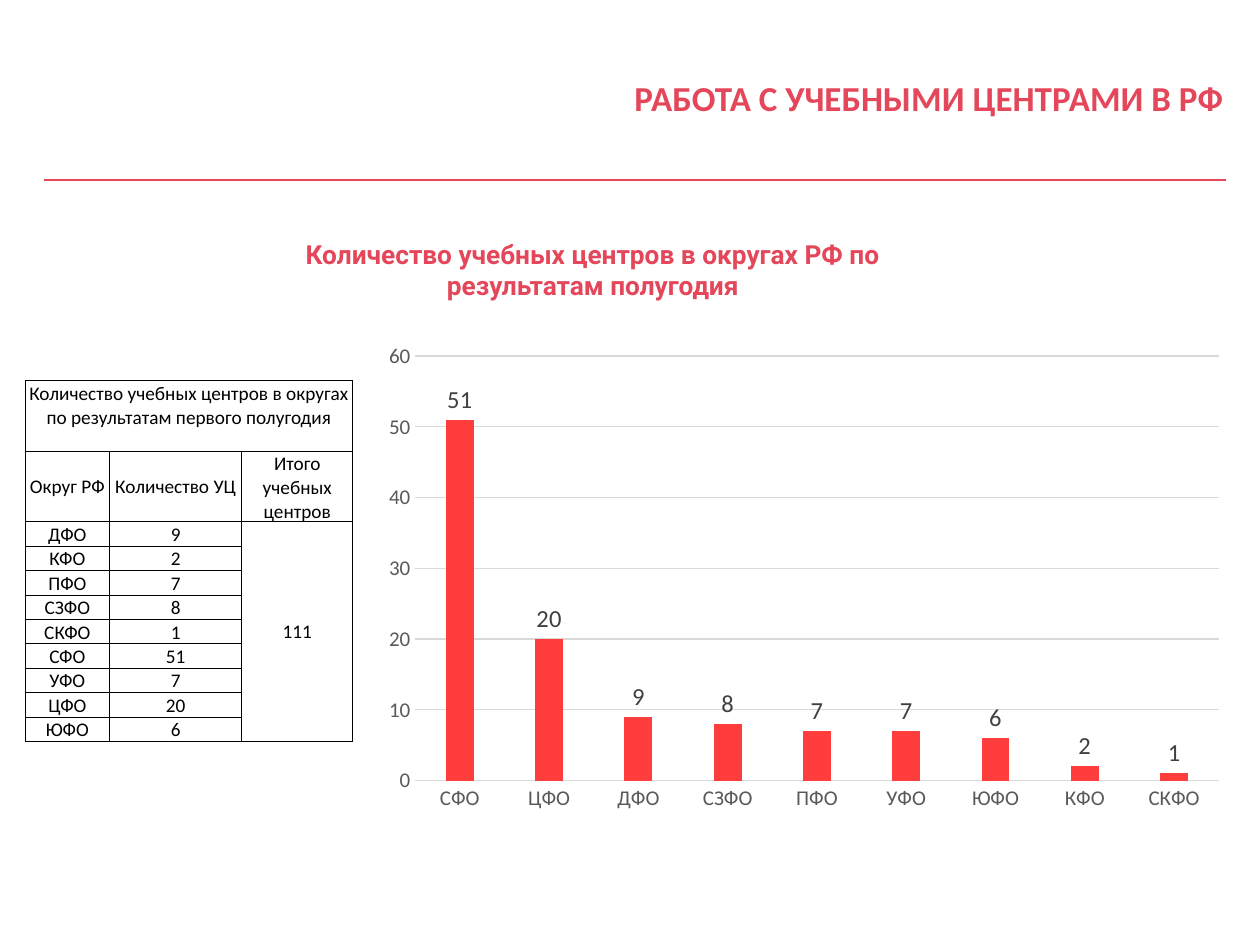
from dataclasses import dataclass

from lxml.etree import SubElement
from pptx import Presentation
from pptx.chart.data import CategoryChartData
from pptx.dml.color import RGBColor
from pptx.enum.chart import XL_CHART_TYPE, XL_LABEL_POSITION, XL_TICK_MARK
from pptx.enum.shapes import MSO_CONNECTOR
from pptx.enum.text import MSO_ANCHOR, MSO_AUTO_SIZE, PP_ALIGN
from pptx.oxml.ns import qn
from pptx.util import Inches, Pt


@dataclass(frozen=True)
class Theme:
    accent: str = "E4465A"
    bar: str = "FF3D3D"
    ink: str = "000000"
    axis: str = "595959"
    value: str = "404040"
    grid: str = "D9D9D9"
    body_font: str = "Calibri"
    heading_font: str = "Roboto"
    title_size: int = 20
    heading_size: int = 15
    table_size: int = 11
    axis_size: int = 12
    value_size: int = 14
    chart_size: int = 10


class DistrictSlide:
    columns, rows = 100, 75

    def __init__(self, deck, theme):
        self.theme = theme
        self.column = deck.slide_width / self.columns
        self.row = deck.slide_height / self.rows
        self.slide = deck.slides.add_slide(deck.slide_layouts[5])
        self.shapes = self.slide.shapes

    def box(self, left, top, width, height):
        return (round(left * self.column), round(top * self.row),
                round(width * self.column), round(height * self.row))

    def style(self, font, size, color, name=None, bold=False):
        font.name = name or self.theme.body_font
        font.size = Pt(size)
        font.bold = bold
        font.color.rgb = RGBColor.from_string(color)

    def heading(self, frame, text, align, **look):
        frame.word_wrap = True
        frame.vertical_anchor = MSO_ANCHOR.TOP
        frame.text = text
        paragraph = frame.paragraphs[0]
        paragraph.alignment = align
        self.style(paragraph.font, bold=True, color=self.theme.accent, **look)
        return paragraph

    def title(self, text, *area):
        title = self.shapes.title
        title.left, title.top, title.width, title.height = self.box(*area)
        title.text_frame.auto_size = MSO_AUTO_SIZE.NONE
        paragraph = self.heading(title.text_frame, text, PP_ALIGN.RIGHT,
                                 size=self.theme.title_size)
        paragraph.line_spacing = 0.87

    def subtitle(self, text, *area):
        frame = self.shapes.add_textbox(*self.box(*area)).text_frame
        self.heading(frame, text, PP_ALIGN.CENTER, size=self.theme.heading_size,
                     name=self.theme.heading_font)

    def rule(self, left, right, top):
        x, y, length, _ = self.box(left, top, right - left, 0)
        divider = self.shapes.add_connector(MSO_CONNECTOR.STRAIGHT, x, y, x + length, y)
        divider.line.color.rgb = RGBColor.from_string(self.theme.accent)
        divider.line.width = Pt(1.5)
        SubElement(divider._element.spPr, qn("a:effectLst"))

    def border(self, cell):
        properties = cell._tc.get_or_add_tcPr()
        for side in ("lnL", "lnR", "lnT", "lnB"):
            edge = SubElement(properties, qn(f"a:{side}"), w=str(Pt(0.5)))
            fill = SubElement(edge, qn("a:solidFill"))
            SubElement(fill, qn("a:srgbClr"), val=self.theme.ink)

    def cell(self, cell, text, anchor):
        self.border(cell)
        cell.fill.background()
        cell.margin_left = cell.margin_right = cell.margin_top = Inches(0.01)
        cell.margin_bottom = 0
        cell.vertical_anchor = anchor
        cell.text = text
        paragraph = cell.text_frame.paragraphs[0]
        paragraph.alignment = PP_ALIGN.CENTER
        self.style(paragraph.font, self.theme.table_size, self.theme.ink)

    def table(self, caption, headers, counts, left, top, widths, head_height, row_height):
        heights = [head_height] * 2 + [row_height] * len(counts)
        area = self.box(left, top, sum(widths), sum(heights))
        table = self.shapes.add_table(len(heights), len(widths), *area).table
        table.first_row = table.horz_banding = False
        for column, width in zip(table.columns, widths):
            column.width = round(width * self.column)
        for row, height in zip(table.rows, heights):
            row.height = round(height * self.row)

        total = str(sum(counts.values()))
        districts = [(name, str(count), "") for name, count in counts.items()]
        districts[0] = (*districts[0][:2], total)
        texts = [(caption, "", ""), headers, *districts]
        anchors = {(0, 0): MSO_ANCHOR.TOP, (1, 0): MSO_ANCHOR.MIDDLE,
                   (1, 1): MSO_ANCHOR.MIDDLE, (2, 2): MSO_ANCHOR.MIDDLE}
        for r, line in enumerate(texts):
            for c, text in enumerate(line):
                self.cell(table.cell(r, c), text, anchors.get((r, c), MSO_ANCHOR.BOTTOM))
        table.cell(0, 0).merge(table.cell(0, 2))
        table.cell(2, 2).merge(table.cell(len(heights) - 1, 2))

    def axis(self, axis):
        axis.major_tick_mark = axis.minor_tick_mark = XL_TICK_MARK.NONE
        self.style(axis.tick_labels.font, self.theme.axis_size, self.theme.axis)

    def hairline(self, line):
        line.color.rgb = RGBColor.from_string(self.theme.grid)
        line.width = Pt(0.75)

    def chart(self, series_name, counts, *area):
        data = CategoryChartData(number_format="0")
        data.categories = list(counts)
        data.add_series(series_name, list(counts.values()))
        chart = self.shapes.add_chart(
            XL_CHART_TYPE.COLUMN_CLUSTERED, *self.box(*area), data).chart
        chart.has_title = chart.has_legend = False
        self.style(chart.font, self.theme.chart_size, self.theme.ink,
                   self.theme.heading_font)

        self.axis(chart.category_axis)
        self.hairline(chart.category_axis.format.line)
        scale = chart.value_axis
        self.axis(scale)
        scale.minimum_scale, scale.maximum_scale, scale.major_unit = 0, 60, 10
        scale.format.line.fill.background()
        self.hairline(scale.major_gridlines.format.line)

        plot = chart.plots[0]
        plot.gap_width, plot.overlap = 219, -27
        plot.vary_by_categories = False
        bars = plot.series[0]
        bars.format.fill.solid()
        bars.format.fill.fore_color.rgb = RGBColor.from_string(self.theme.bar)
        labels = bars.data_labels
        labels.show_value = True
        labels.position = XL_LABEL_POSITION.OUTSIDE_END
        self.style(labels.font, self.theme.value_size, self.theme.value)


def main():
    deck = Presentation()
    deck.slide_width, deck.slide_height = Inches(10), Inches(7.5)
    centers = {"ДФО": 9, "КФО": 2, "ПФО": 7, "СЗФО": 8, "СКФО": 1,
               "СФО": 51, "УФО": 7, "ЦФО": 20, "ЮФО": 6}
    ranked = dict(sorted(centers.items(), key=lambda entry: -entry[1]))

    page = DistrictSlide(deck, Theme())
    page.rule(3.5, 97.3, 14.3)
    page.title("РАБОТА С УЧЕБНЫМИ ЦЕНТРАМИ В РФ", 16, 6, 82.1, 5.3)
    page.subtitle("Количество учебных центров в округах РФ по результатам полугодия",
                  22.4, 18.4, 49.3, 8.6)
    page.table("Количество учебных центров в округах по результатам первого полугодия",
               ("Округ РФ", "Количество УЦ", "Итого учебных центров"), centers,
               left=2, top=30.2, widths=(6.7, 10.5, 8.8), head_height=5.6, row_height=1.91)
    page.chart("Series 1", ranked, 29.5, 26.5, 68.6, 38.6)
    deck.save("out.pptx")


if __name__ == "__main__":
    main()
